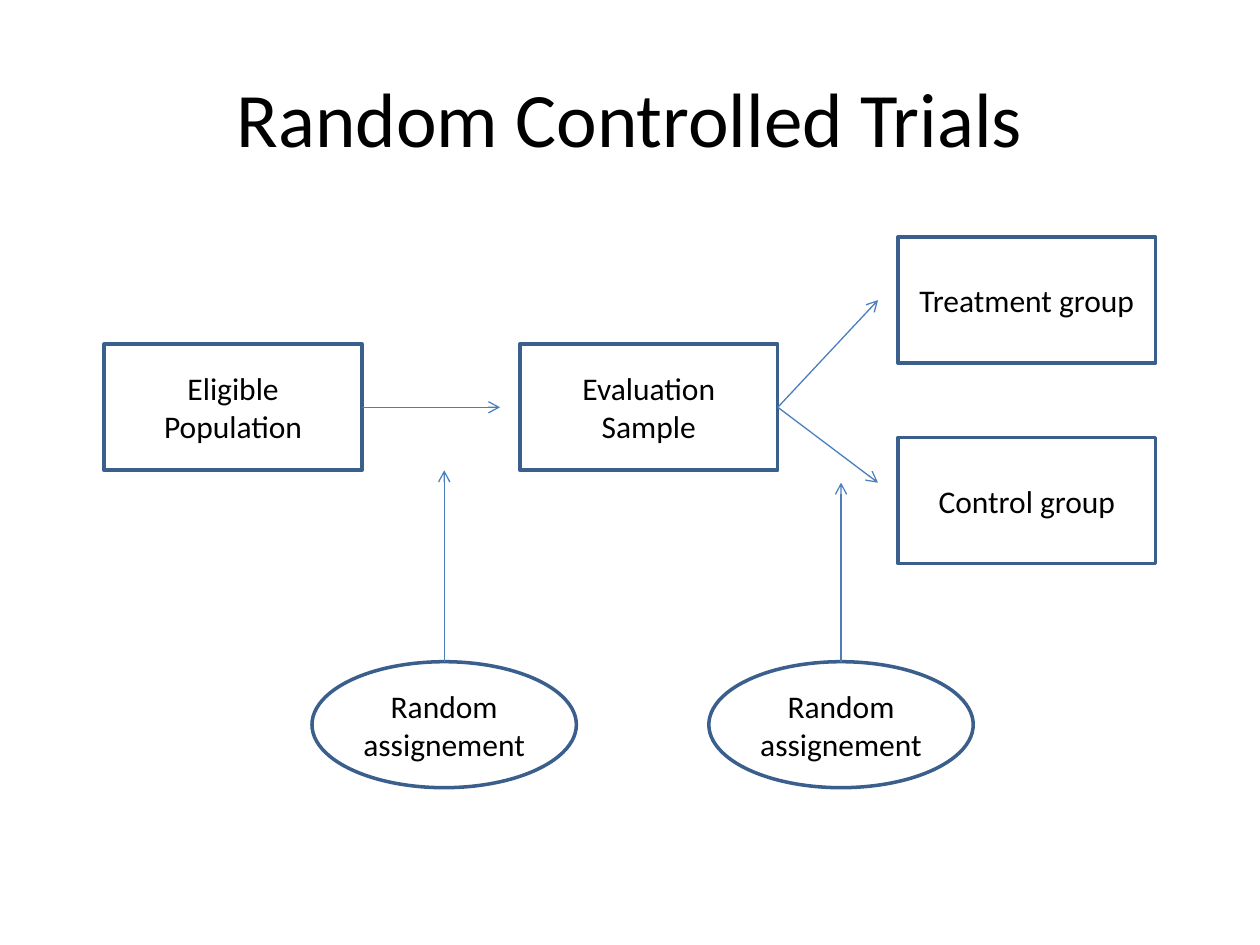
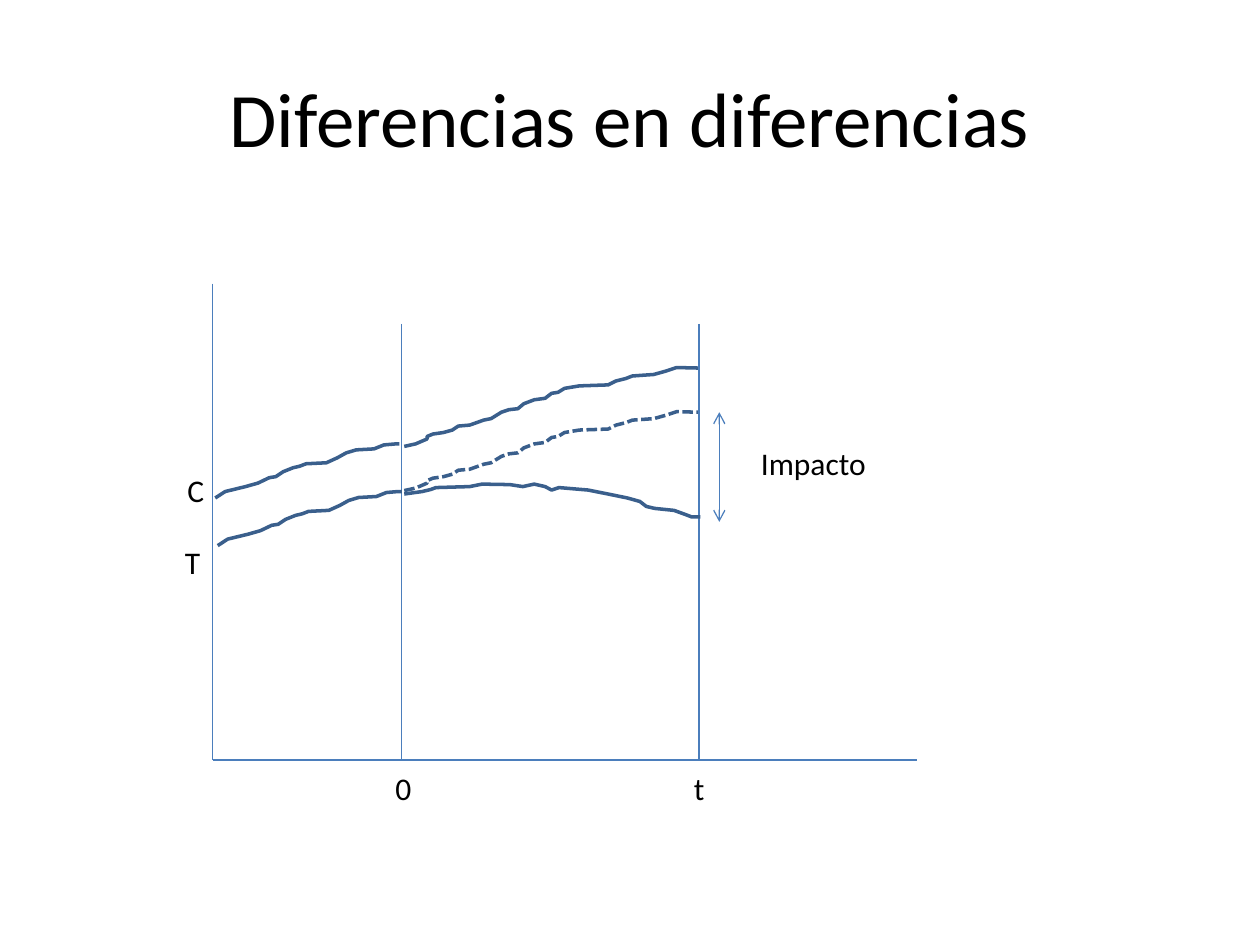
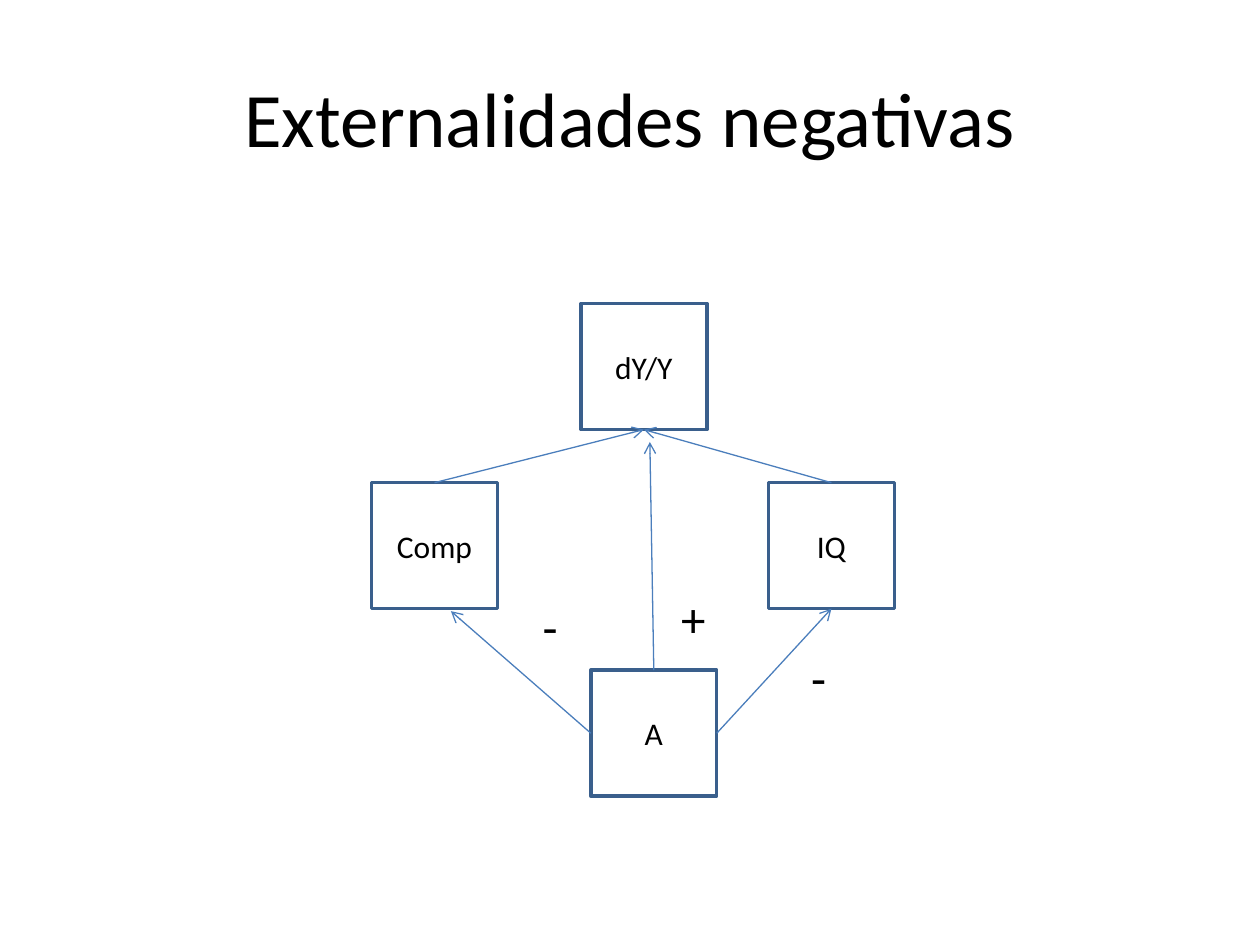
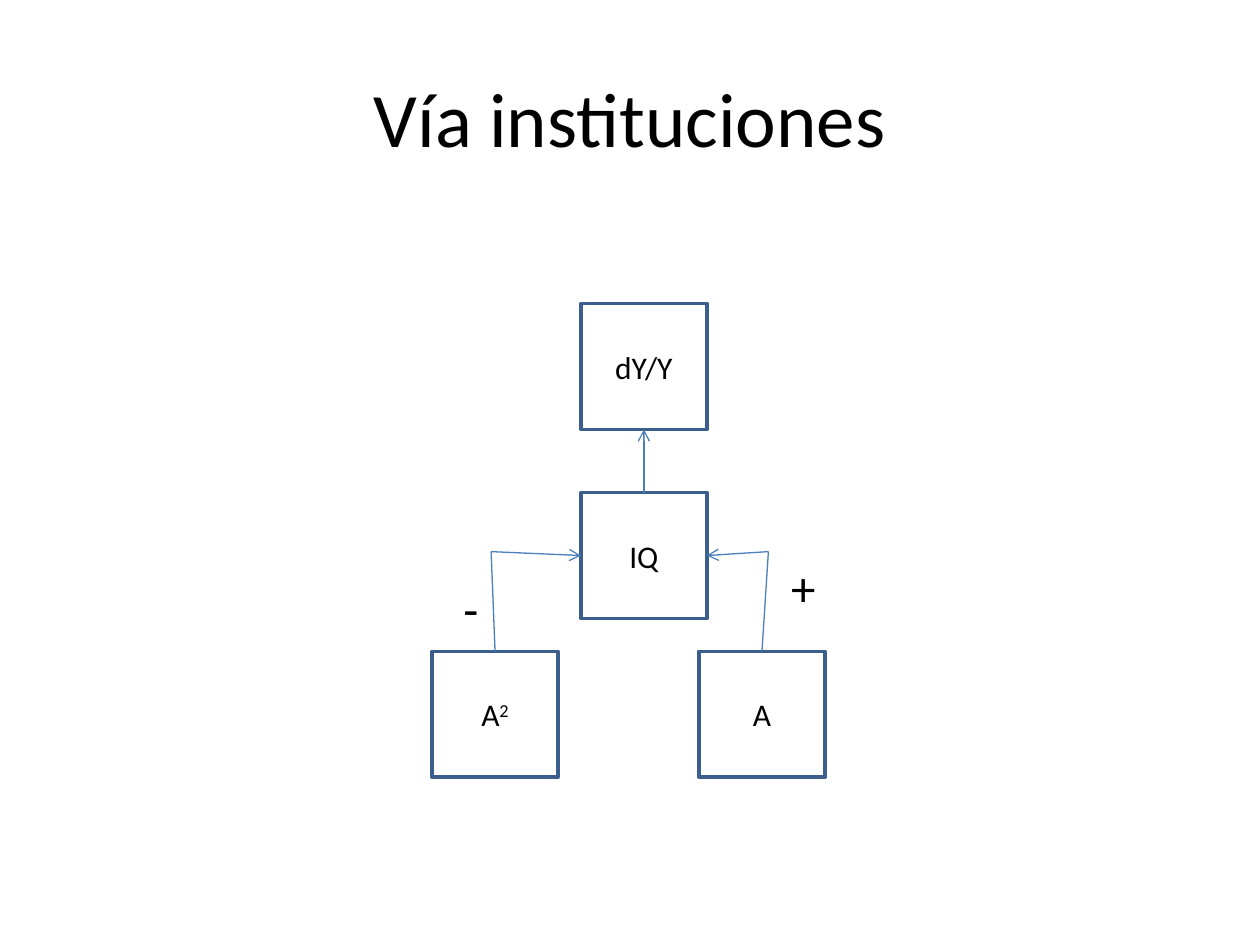
from dataclasses import dataclass

from lxml.etree import SubElement
from pptx import Presentation
from pptx.dml.color import RGBColor
from pptx.enum.dml import MSO_LINE_DASH_STYLE as Dash
from pptx.enum.shapes import MSO_CONNECTOR_TYPE as Link, MSO_SHAPE as Preset
from pptx.enum.text import MSO_ANCHOR as Anchor, MSO_AUTO_SIZE as Fit, PP_ALIGN as Align
from pptx.oxml.ns import qn
from pptx.util import Cm, Pt

FONT = "Calibri"
INK = "000000"
OUTLINE = "3A5F8C"
ARROW = "4B7EBC"
SIDE = 2.54

BASELINE_TREND = [
    (0, 0), (0.2, -0.13), (0.61, -0.23), (0.86, -0.3), (1.09, -0.41), (1.22, -0.43),
    (1.37, -0.53), (1.57, -0.61), (1.7, -0.64), (1.83, -0.69), (2.24, -0.71),
    (2.46, -0.81), (2.64, -0.91), (2.84, -0.97), (3.2, -0.99), (3.4, -1.07),
    (3.63, -1.09), (3.71, -1.09),
]
CONTROL_TREND = [
    (0, 0), (0.23, -0.05), (0.46, -0.15), (0.46, -0.2), (0.58, -0.25), (0.79, -0.28),
    (0.97, -0.33), (1.09, -0.41), (1.32, -0.43), (1.6, -0.53), (1.75, -0.56),
    (1.96, -0.69), (2.11, -0.74), (2.29, -0.76), (2.41, -0.86), (2.62, -0.94),
    (2.84, -0.97), (2.97, -1.07), (3.1, -1.09), (3.23, -1.17), (3.53, -1.22),
    (4.11, -1.24), (4.27, -1.32), (4.47, -1.37), (4.6, -1.42), (5.03, -1.45),
    (5.28, -1.52), (5.49, -1.59), (5.92, -1.58),
]
TREATED_TREND = [
    (0, 0), (0.36, -0.05), (0.53, -0.09), (0.64, -0.13), (1.32, -0.15), (1.57, -0.2),
    (2.13, -0.19), (2.39, -0.15), (2.62, -0.2), (2.84, -0.15), (2.97, -0.08),
    (3.12, -0.13), (3.71, -0.08), (4.11, 0), (4.5, 0.08), (4.75, 0.15), (4.88, 0.25),
    (5.05, 0.29), (5.44, 0.33), (5.66, 0.41), (5.79, 0.46), (5.97, 0.46),
]


@dataclass
class Box:
    """A rectangle in centimetres."""

    left: float
    top: float
    width: float = SIDE
    height: float = SIDE

    def at(self, across, down):
        """Return the point at these offsets from the top left corner."""
        return self.left + across, self.top + down

    def edge(self, name):
        """Return the middle of the named edge."""
        across, down = {"left": (0, 0.5), "right": (1, 0.5),
                        "top": (0.5, 0), "bottom": (0.5, 1)}[name]
        return self.at(across * self.width, down * self.height)

    def inner(self, across, down, width=SIDE, height=SIDE):
        """Return a box placed relative to this one."""
        return Box(*self.at(across, down), width, height)

    def lengths(self):
        """Return left, top, width and height as slide lengths."""
        return [Cm(value) for value in (self.left, self.top, self.width, self.height)]


def color(code):
    """Turn a hex string into a colour."""
    return RGBColor.from_string(code)


def write(frame, text, size=18, align=Align.CENTER, anchor=Anchor.MIDDLE,
          wrap=True, fit=Fit.NONE, superscript=""):
    """Write one formatted paragraph into a text frame."""
    frame.word_wrap = wrap
    frame.auto_size = fit
    frame.vertical_anchor = anchor
    para = frame.paragraphs[0]
    para.alignment = align
    for part in filter(None, (text, superscript)):
        span = para.add_run()
        span.text = part
        span.font.name = FONT
        span.font.size = Pt(size)
        span.font.color.rgb = color(INK)
    if superscript:
        span.font._element.set("baseline", "30000")


def outline(shape, dash=None):
    """Give a shape the shared outline, without fill or shadow."""
    shape.shadow.inherit = False
    shape.fill.background()
    shape.line.color.rgb = color(OUTLINE)
    shape.line.width = Pt(2)
    if dash:
        shape.line.dash_style = dash


def add_node(page, box, text, preset=Preset.RECTANGLE, superscript=""):
    """Add an outlined node and return its box."""
    shape = page.shapes.add_shape(preset, *box.lengths())
    outline(shape)
    write(shape.text_frame, text, superscript=superscript)
    return box


def add_line(page, start, end, head=False, tail=False):
    """Add a thin straight line with optional arrowheads."""
    line = page.shapes.add_connector(Link.STRAIGHT, *(Cm(n) for n in (*start, *end)))
    line.line.color.rgb = color(ARROW)
    line.line.width = Pt(0.75)
    props = line._element.spPr
    for tag, wanted in (("a:headEnd", head), ("a:tailEnd", tail)):
        if wanted:
            SubElement(props.find(qn("a:ln")), qn(tag), type="arrow")
    SubElement(props, qn("a:effectLst"))


def add_arrow(page, start, end):
    """Add a line that points at its end."""
    add_line(page, start, end, tail=True)


def add_label(page, box, text, size=18):
    """Add a free label that fits its text."""
    label = page.shapes.add_textbox(*box.lengths())
    write(label.text_frame, text, size=size, align=Align.LEFT, anchor=Anchor.TOP,
          wrap=False, fit=Fit.SHAPE_TO_FIT_TEXT)


def add_sign(page, box, text):
    """Add a large plus or minus sign."""
    add_label(page, box, text, size=28)


def add_curve(page, start, trend, dash=None):
    """Draw an open outline through the trend, shifted to its start."""
    left, top = start
    points = [(Cm(left + x), Cm(top + y)) for x, y in trend]
    builder = page.shapes.build_freeform(*points[0])
    builder.add_line_segments(points[1:], close=False)
    outline(builder.convert_to_shape(), dash)


def add_page(deck, title):
    """Add a blank page with the shared title."""
    page = deck.slides.add_slide(deck.slide_layouts[6])
    heading = page.shapes.add_textbox(*Box(1.27, 0.76, 22.86, 3.18).lengths())
    write(heading.text_frame, title, size=44)
    return page


def draw_trial(page, area):
    """Draw the flow from population to groups."""
    def group(across, down, text):
        return add_node(page, area.inner(across, down, 5.2), text)

    eligible = group(0, 2.16, "Eligible Population")
    sample = group(8.38, 2.16, "Evaluation Sample")
    control = group(16, 4.04, "Control group")
    treatment = group(16, 0, "Treatment group")
    for origin, target, lift in ((eligible, sample, 0), (sample, treatment, 0),
                                 (sample, control, 0.36)):
        x, y = target.edge("left")
        add_arrow(page, origin.edge("right"), (x - 0.4, y - lift))
    for across, rise in ((4.19, 3.86), (12.19, 3.61)):
        draw = add_node(page, area.inner(across, 8.56, 5.33), "Random assignement",
                        Preset.OVAL)
        x, y = draw.edge("top")
        add_arrow(page, (x, y), (x, y - rise))


def draw_differences(page, area):
    """Draw the axes, trends and impact of the two groups."""
    floor = area.height
    add_line(page, area.at(0, 0), area.at(0, floor))
    add_line(page, area.at(0, floor), area.at(area.width, floor))
    for across in (3.81, 9.8):
        add_line(page, area.at(across, 0.81), area.at(across, floor))
    for across, down, trend, dash in (
        (0.05, 4.32, BASELINE_TREND, None),
        (0.1, 5.28, BASELINE_TREND, None),
        (3.86, 3.28, CONTROL_TREND, None),
        (3.86, 4.17, CONTROL_TREND, Dash.SQUARE_DOT),
        (3.86, 4.24, TREATED_TREND, None),
    ):
        add_curve(page, area.at(across, down), trend, dash)
    add_line(page, area.at(10.21, 2.59), area.at(10.21, 4.8), head=True, tail=True)
    for across, down, width, text in (
        (10.8, 3.1, 2.64, "Impacto"),
        (3.43, 9.65, 0.84, "0"),
        (9.45, 9.65, 0.74, "t"),
        (-0.81, 5.11, 0.81, "T"),
        (-0.76, 3.66, 0.86, "C"),
    ):
        add_label(page, area.inner(across, down, width, 1.02), text)


def draw_externalities(page, area):
    """Draw the direct and indirect effects on growth."""
    growth = add_node(page, area.inner(4.22, 0), "dY/Y")
    aid = add_node(page, area.inner(4.42, 7.39), "A")
    competition = add_node(page, area.inner(0, 3.61), "Comp")
    quality = add_node(page, area.inner(8, 3.61), "IQ")
    for factor in (quality, competition):
        add_arrow(page, factor.edge("top"), growth.edge("bottom"))
    add_arrow(page, aid.edge("top"), area.at(5.61, 2.79))
    add_arrow(page, aid.edge("left"), area.at(1.6, 6.2))
    add_arrow(page, aid.edge("right"), quality.edge("bottom"))
    for across, down, width, text in ((3.2, 5.79, 0.81, "-"), (5.99, 5.61, 1.02, "+"),
                                      (8.61, 6.81, 0.81, "-")):
        add_sign(page, area.inner(across, down, width, 1.45), text)


def draw_institutions(page, area):
    """Draw the effects that pass through institutions."""
    growth = add_node(page, area.inner(3, 0), "dY/Y")
    aid = add_node(page, area.inner(5.38, 7.01), "A")
    aid_squared = add_node(page, area.inner(0, 7.01), "A", superscript="2")
    quality = add_node(page, area.inner(3, 3.81), "IQ")
    for origin, across, side in ((aid, 6.78, "right"), (aid_squared, 1.19, "left")):
        bend = area.at(across, 5)
        add_line(page, origin.edge("top"), bend)
        add_arrow(page, bend, quality.edge(side))
    add_arrow(page, quality.edge("top"), growth.edge("bottom"))
    add_sign(page, area.inner(0.38, 5.41, 0.81, 1.45), "-")
    add_sign(page, area.inner(6.99, 5, 1.02, 1.45), "+")


def main():
    """Build and save the deck."""
    deck = Presentation()
    deck.slide_width, deck.slide_height = Cm(25.4), Cm(19.05)
    for title, draw, area in (
        ("Random Controlled Trials", draw_trial, Box(2.1, 4.78, 21.2, 11.1)),
        ("Diferencias en diferencias", draw_differences, Box(4.29, 5.72, 14.2, 9.6)),
        ("Externalidades negativas", draw_externalities, Box(7.49, 6.12, 10.54, 9.93)),
        ("Vía instituciones", draw_institutions, Box(8.71, 6.12, 7.92, 9.55)),
    ):
        draw(add_page(deck, title), area)
    deck.save("out.pptx")


if __name__ == "__main__":
    main()
